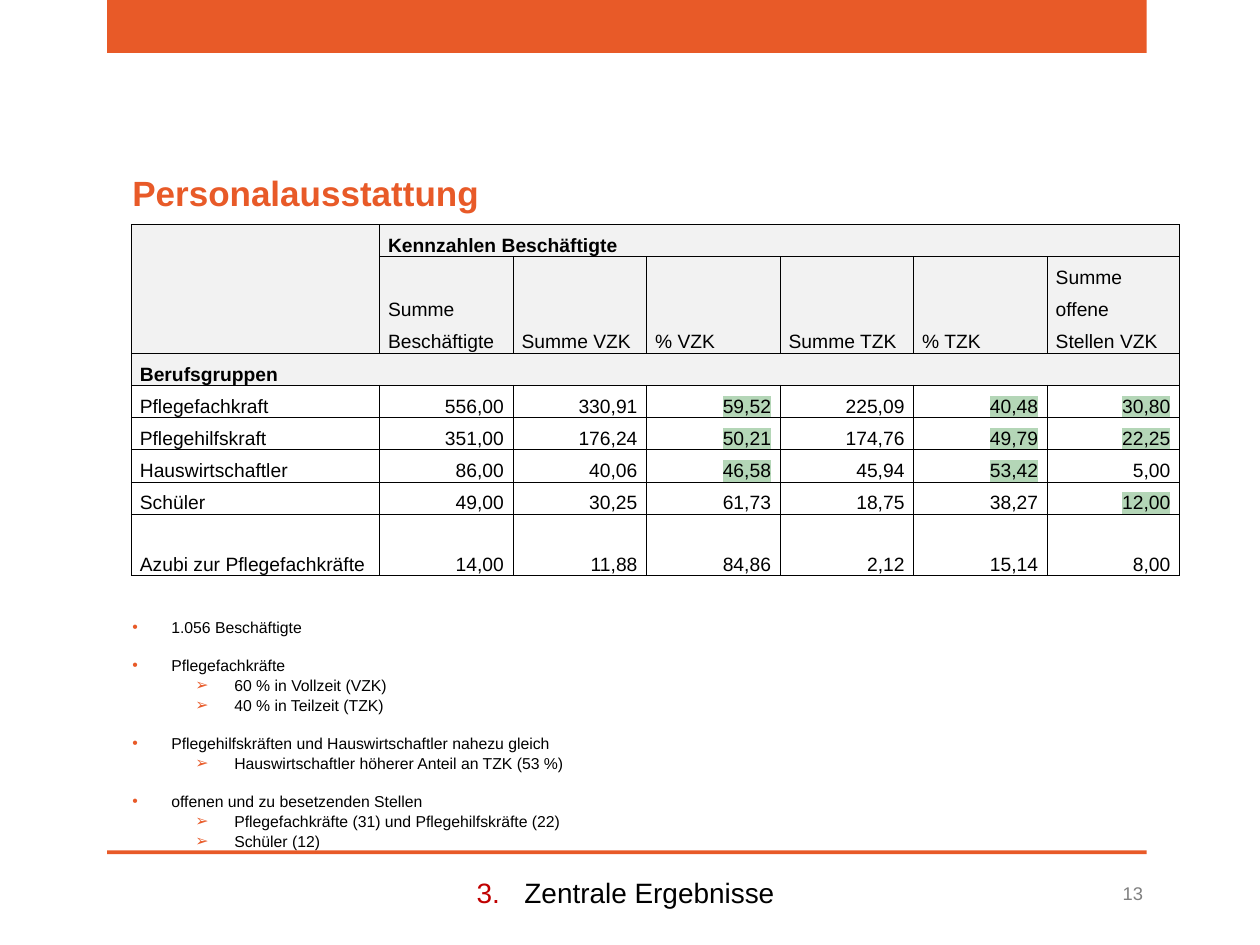
from lxml import etree
from pptx import Presentation
from pptx.dml.color import RGBColor
from pptx.enum.shapes import MSO_SHAPE
from pptx.enum.text import MSO_ANCHOR, MSO_AUTO_SIZE, PP_ALIGN
from pptx.oxml.ns import qn
from pptx.util import Inches, Pt

LEFT, CENTER, RIGHT = PP_ALIGN.LEFT, PP_ALIGN.CENTER, PP_ALIGN.RIGHT
TOP, MIDDLE, BOTTOM = MSO_ANCHOR.TOP, MSO_ANCHOR.MIDDLE, MSO_ANCHOR.BOTTOM

ORANGE = RGBColor(0xE8, 0x5A, 0x28)
RED = RGBColor(0xC0, 0x00, 0x00)
BLACK = RGBColor(0x00, 0x00, 0x00)
GRAY = RGBColor(0x80, 0x80, 0x80)
LIGHT = RGBColor(0xF2, 0xF2, 0xF2)
WHITE = RGBColor(0xFF, 0xFF, 0xFF)
GREEN = RGBColor(0xB4, 0xD6, 0xB7)


def write(p, text, size, color=BLACK, bold=False, align=LEFT, highlight=None,
          line=1.0, before=0, after=0):
    p.alignment, p.line_spacing = align, line
    p.space_before, p.space_after = Pt(before), Pt(after)
    r = p.add_run()
    r.text = text
    r.font.size, r.font.bold, r.font.name = Pt(size), bold, "Arial"
    r.font.color.rgb = color
    if highlight:
        mark = etree.Element(qn("a:highlight"))
        etree.SubElement(mark, qn("a:srgbClr"), val=str(highlight))
        r.font.fill  # the highlight belongs right after the text fill
        r._r.rPr.find(qn("a:solidFill")).addnext(mark)


def add_bullet(p, color, left, hanging, tag, **attrs):
    pPr = p._p.get_or_add_pPr()
    pPr.set("marL", str(Inches(left)))
    pPr.set("indent", str(-Inches(hanging)))
    clr = etree.SubElement(pPr, qn("a:buClr"))
    etree.SubElement(clr, qn("a:srgbClr"), val=str(color))
    etree.SubElement(pPr, qn("a:buFont"), typeface="Arial")
    etree.SubElement(pPr, qn(tag), **attrs)


prs = Presentation()
prs.slide_width, prs.slide_height = Inches(10), Inches(7.5)
slide = prs.slides.add_slide(prs.slide_layouts[1])

# Orange bands at the top and above the footer
for top, height in ((0, 0.42), (6.75, 0.03)):
    sp = slide.shapes.add_shape(MSO_SHAPE.RECTANGLE, Inches(0.85), Inches(top),
                                Inches(8.25), Inches(height))
    sp.shadow.inherit = False
    sp.fill.solid()
    sp.fill.fore_color.rgb = ORANGE
    sp.line.fill.background()

# Title, list, footer and page number frames
title, body = slide.shapes.title, slide.placeholders[1]
footer = slide.shapes.add_textbox(0, 0, 0, 0)
number = slide.shapes.add_textbox(0, 0, 0, 0)
for sp, box, anchor in (
    (title, (0.95, 1.31, 8.21, 0.44), TOP),
    (body, (0.95, 4.85, 8.11, 2.05), TOP),
    (footer, (0.83, 6.9, 8.27, 0.37), TOP),
    (number, (8.34, 6.89, 0.83, 0.4), MIDDLE),
):
    sp.left, sp.top, sp.width, sp.height = map(Inches, box)
    tf = sp.text_frame
    tf.word_wrap, tf.auto_size = True, MSO_AUTO_SIZE.NONE
    tf.vertical_anchor = anchor

write(title.text_frame.paragraphs[0], "Personalausstattung", 20, ORANGE, bold=True)
write(number.text_frame.paragraphs[0], "13", 10.5, GRAY, align=RIGHT)
p = footer.text_frame.paragraphs[0]
write(p, "Zentrale Ergebnisse", 16, align=CENTER)
add_bullet(p, RED, 0.38, 0.38, "a:buAutoNum", type="arabicPeriod", startAt="3")

# Staffing table
HEADS = ["Summe Beschäftigte", "Summe VZK", "% VZK", "Summe TZK", "% TZK",
         "Summe offene Stellen VZK"]
STAFF = [
    ["Pflegefachkraft", "556,00", "330,91", "59,52", "225,09", "40,48", "30,80"],
    ["Pflegehilfskraft", "351,00", "176,24", "50,21", "174,76", "49,79", "22,25"],
    ["Hauswirtschaftler", "86,00", "40,06", "46,58", "45,94", "53,42", "5,00"],
    ["Schüler", "49,00", "30,25", "61,73", "18,75", "38,27", "12,00"],
    ["Azubi zur Pflegefachkräfte", "14,00", "11,88", "84,86", "2,12", "15,14", "8,00"],
]
MARKED = {"59,52", "40,48", "30,80", "50,21", "49,79", "22,25", "46,58", "53,42", "12,00"}
rows = [["", "Kennzahlen Beschäftigte"] + [""] * 5,
        [""] + HEADS,
        ["Berufsgruppen"] + [""] * 6] + STAFF
col_widths = [1.97] + [1.06] * 5 + [1.05]
row_heights = [0.23, 0.74] + [0.23] * 5 + [0.49]

table = slide.shapes.add_table(len(rows), len(col_widths), Inches(1.04), Inches(1.78),
                               Inches(sum(col_widths)), Inches(sum(row_heights))).table
table.first_row = table.horz_banding = False
for col, width in zip(table.columns, col_widths):
    col.width = Inches(width)
for row, height in zip(table.rows, row_heights):
    row.height = Inches(height)

for i, texts in enumerate(rows):
    for j, text in enumerate(texts):
        cell = table.cell(i, j)
        cell.margin_left = cell.margin_right = Inches(0.07)
        cell.margin_top = cell.margin_bottom = 0
        cell.vertical_anchor = BOTTOM if i else TOP
        for side in ("a:lnL", "a:lnR", "a:lnT", "a:lnB"):
            ln = etree.SubElement(cell._tc.get_or_add_tcPr(), qn(side), w=str(Pt(0.25)))
            fill = etree.SubElement(ln, qn("a:solidFill"))
            etree.SubElement(fill, qn("a:srgbClr"), val=str(BLACK))
        cell.fill.solid()
        cell.fill.fore_color.rgb = LIGHT if i < 3 else WHITE
        if text:
            write(cell.text_frame.paragraphs[0], text, 11, bold=i in (0, 2),
                  align=RIGHT if i > 2 and j else LEFT,
                  highlight=GREEN if text in MARKED else None, line=1.5, after=10)

table.cell(0, 0).merge(table.cell(1, 0))
table.cell(0, 1).merge(table.cell(0, 6))
table.cell(2, 0).merge(table.cell(2, 6))

# Findings: one line of space before each main point
FINDINGS = [
    ("1.056 Beschäftigte", []),
    ("Pflegefachkräfte", ["60 % in Vollzeit (VZK)", "40 % in Teilzeit (TZK)"]),
    ("Pflegehilfskräften und Hauswirtschaftler nahezu gleich",
     ["Hauswirtschaftler höherer Anteil an TZK (53 %)"]),
    ("offenen und zu besetzenden Stellen",
     ["Pflegefachkräfte (31) und Pflegehilfskräfte (22)", "Schüler (12)"]),
]
tf = body.text_frame
for n, (point, details) in enumerate(FINDINGS):
    p = tf.add_paragraph() if n else tf.paragraphs[0]
    write(p, point, 9, before=11.2 if n else 0)
    add_bullet(p, ORANGE, 0.31, 0.31, "a:buChar", char="•")
    for detail in details:
        p = tf.add_paragraph()
        p.level = 1
        write(p, detail, 9, before=0.4)
        add_bullet(p, ORANGE, 0.81, 0.31, "a:buChar", char="➢")

prs.save("out.pptx")
